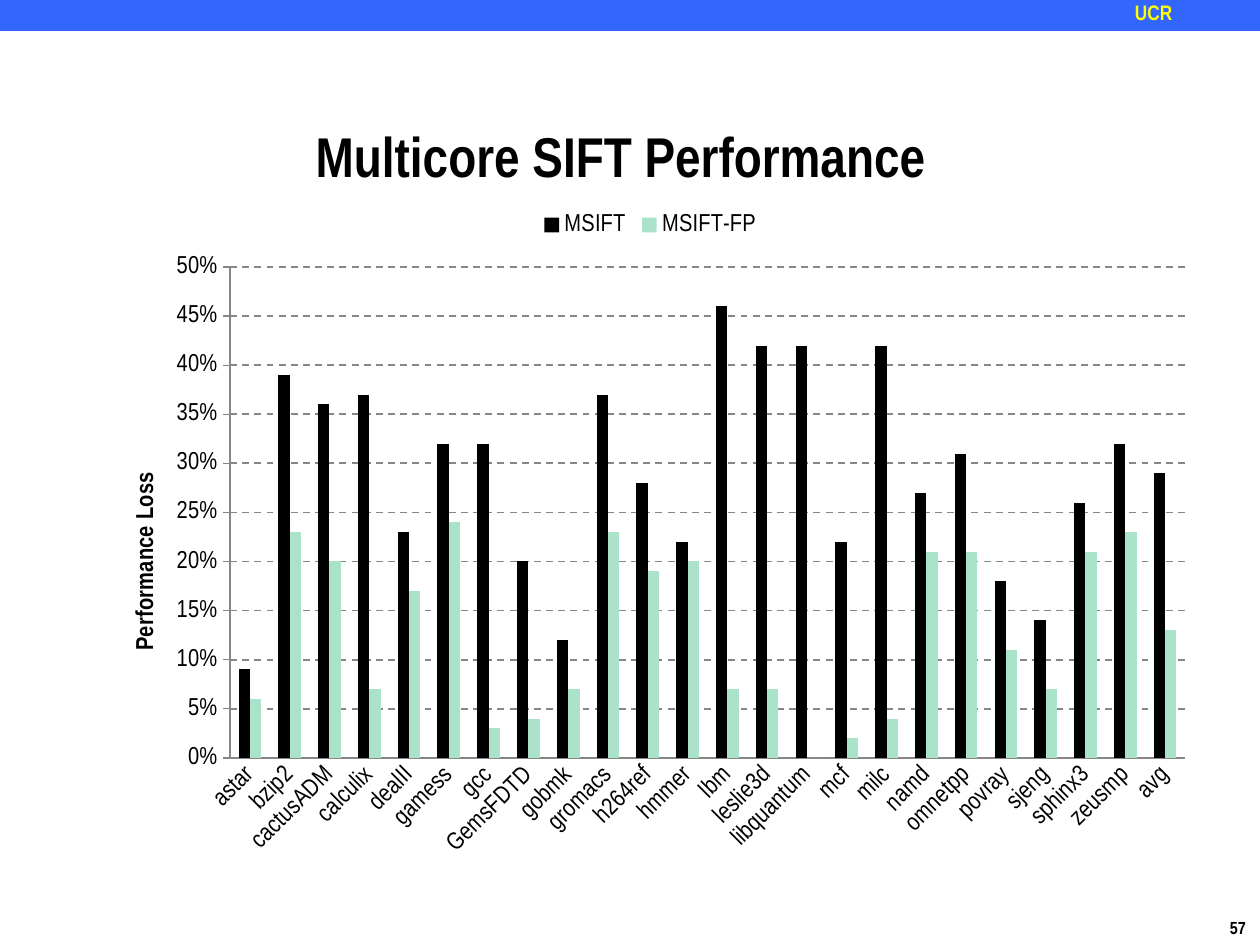
from lxml import etree
from pptx import Presentation
from pptx.chart.data import CategoryChartData
from pptx.dml.color import RGBColor
from pptx.enum.chart import XL_CHART_TYPE, XL_LEGEND_POSITION, XL_TICK_MARK
from pptx.enum.dml import MSO_LINE
from pptx.enum.shapes import MSO_SHAPE
from pptx.enum.text import PP_ALIGN
from pptx.oxml import parse_xml
from pptx.oxml.ns import nsdecls, qn
from pptx.util import Pt

PX = 914400 / 126
FONT = "Arial Narrow"
RECT = MSO_SHAPE.RECTANGLE
COLUMN = XL_CHART_TYPE.COLUMN_CLUSTERED
TOP = XL_LEGEND_POSITION.TOP
NO_TICK, OUT_TICK = XL_TICK_MARK.NONE, XL_TICK_MARK.OUTSIDE
DASH = MSO_LINE.DASH
LEFT, CENTER = PP_ALIGN.LEFT, PP_ALIGN.CENTER
GRAY = "868686"

NAMES = ("astar bzip2 cactusADM calculix dealII gamess gcc GemsFDTD gobmk "
         "gromacs h264ref hmmer lbm leslie3d libquantum mcf milc namd omnetpp "
         "povray sjeng sphinx3 zeusmp avg").split()
LOSS = [
    ("MSIFT", "000000",
     [9, 39, 36, 37, 23, 32, 32, 20, 12, 37, 28, 22,
      46, 42, 42, 22, 42, 27, 31, 18, 14, 26, 32, 29]),
    ("MSIFT-FP", "AAE2CA",
     [6, 23, 20, 7, 17, 24, 3, 4, 7, 23, 19, 20,
      7, 7, 0, 2, 4, 21, 21, 11, 7, 21, 23, 13]),
]


def px(n):
    return round(n * PX)


def paint(target, color):
    """Fill a fill format with a solid colour."""
    target.solid()
    target.fore_color.rgb = RGBColor.from_string(color)


def style(font, size, color="000000", bold=False):
    font.name, font.size, font.bold = FONT, Pt(size), bold
    font.color.rgb = RGBColor.from_string(color)


def add_text(slide, box, text, size, color="000000", align=LEFT, pad=(0, 0), wrap=True):
    frame = slide.shapes.add_textbox(*map(px, box)).text_frame
    frame.word_wrap = wrap
    frame.margin_left = frame.margin_right = px(pad[0])
    frame.margin_top = frame.margin_bottom = px(pad[1])
    para = frame.paragraphs[0]
    para.text, para.alignment = text, align
    style(para.font, size, color, True)
    return para


def add_band(slide, box):
    x, y, w, h = box
    bar = slide.shapes.add_shape(RECT, *map(px, box))
    bar.shadow.inherit = False
    paint(bar.fill, "3366FF")
    bar.line.fill.background()
    add_text(slide, (x + w - 126, y, 126, h - 3), "UCR", 12, "FFFF00")


def set_layout(parent, after, **parts):
    """Place a chart part by fractions of the chart box."""
    old = parent.find(qn("c:layout"))
    if old is not None:
        parent.remove(old)
    node = parse_xml(f"<c:layout {nsdecls('c')}><c:manualLayout/></c:layout>")
    for tag, val in parts.items():
        etree.SubElement(node[0], qn("c:" + tag)).set("val", str(val))
    if after is None:
        parent.insert(0, node)
    else:
        after.addnext(node)


def style_axes(chart):
    cat, val = chart.category_axis, chart.value_axis
    for axis in (cat, val):
        style(axis.tick_labels.font, 14)
        paint(axis.format.line.fill, GRAY)
        axis.format.line.width = Pt(0.75)
        axis.minor_tick_mark = NO_TICK
    cat.major_tick_mark, val.major_tick_mark = NO_TICK, OUT_TICK
    turn = cat.tick_labels.font._element.getparent().getparent().getparent()
    turn.find(qn("a:bodyPr")).set("rot", str(-45 * 60000))

    val.minimum_scale, val.maximum_scale, val.major_unit = 0, 0.5, 0.05
    val.tick_labels.number_format = "0%"
    val.tick_labels.number_format_is_linked = False
    grid = val.major_gridlines.format.line
    paint(grid.fill, GRAY)
    grid.width, grid.dash_style = Pt(1), DASH

    title = val.axis_title
    para = title.text_frame.paragraphs[0]
    para.text = "Performance Loss"
    style(para.font, 14, bold=True)
    body = title._element.find(".//" + qn("a:bodyPr"))
    body.set("rot", str(-90 * 60000))
    body.set("vert", "horz")
    set_layout(title._element, title._element.find(qn("c:tx")),
               xMode="edge", yMode="edge", x=0.03, y=0.4)


def add_loss(slide, box):
    """Clustered columns of performance loss by benchmark."""
    data = CategoryChartData(number_format="0%")
    data.categories = NAMES
    for name, _, vals in LOSS:
        data.add_series(name, [v / 100 for v in vals])
    chart = slide.shapes.add_chart(COLUMN, *map(px, box), data).chart
    style(chart.font, 10)
    chart.has_title = False
    chart.has_legend = True
    chart.legend.position = TOP
    chart.legend.include_in_layout = False
    style(chart.legend.font, 14)

    plot = chart.plots[0]
    plot.gap_width, plot.overlap = 150, 0
    plot.vary_by_categories = False
    for series, (_, color, _) in zip(plot.series, LOSS):
        paint(series.format.fill, color)
        series.invert_if_negative = False
    style_axes(chart)
    _, _, w, h = box
    area = chart._chartSpace.find(".//" + qn("c:plotArea"))
    set_layout(area, None, layoutTarget="inner", xMode="edge", yMode="edge",
               x=136 / w, y=68 / h, w=955 / w, h=491 / h)


def main():
    deck = Presentation()
    deck.slide_width, deck.slide_height = px(1260), px(945)
    slide = deck.slides.add_slide(deck.slide_layouts[6])
    add_text(slide, (1218, 911, 43, 34), "57", 10, pad=(12, 6), wrap=False)
    add_band(slide, (0, 0, 1261, 31))
    add_loss(slide, (94, 199, 1113, 672))
    title = add_text(slide, (126, 123, 990, 84), "Multicore SIFT Performance",
                     32, align=CENTER, pad=(12, 6))
    title.line_spacing = 0.9
    deck.save("out.pptx")


if __name__ == "__main__":
    main()
